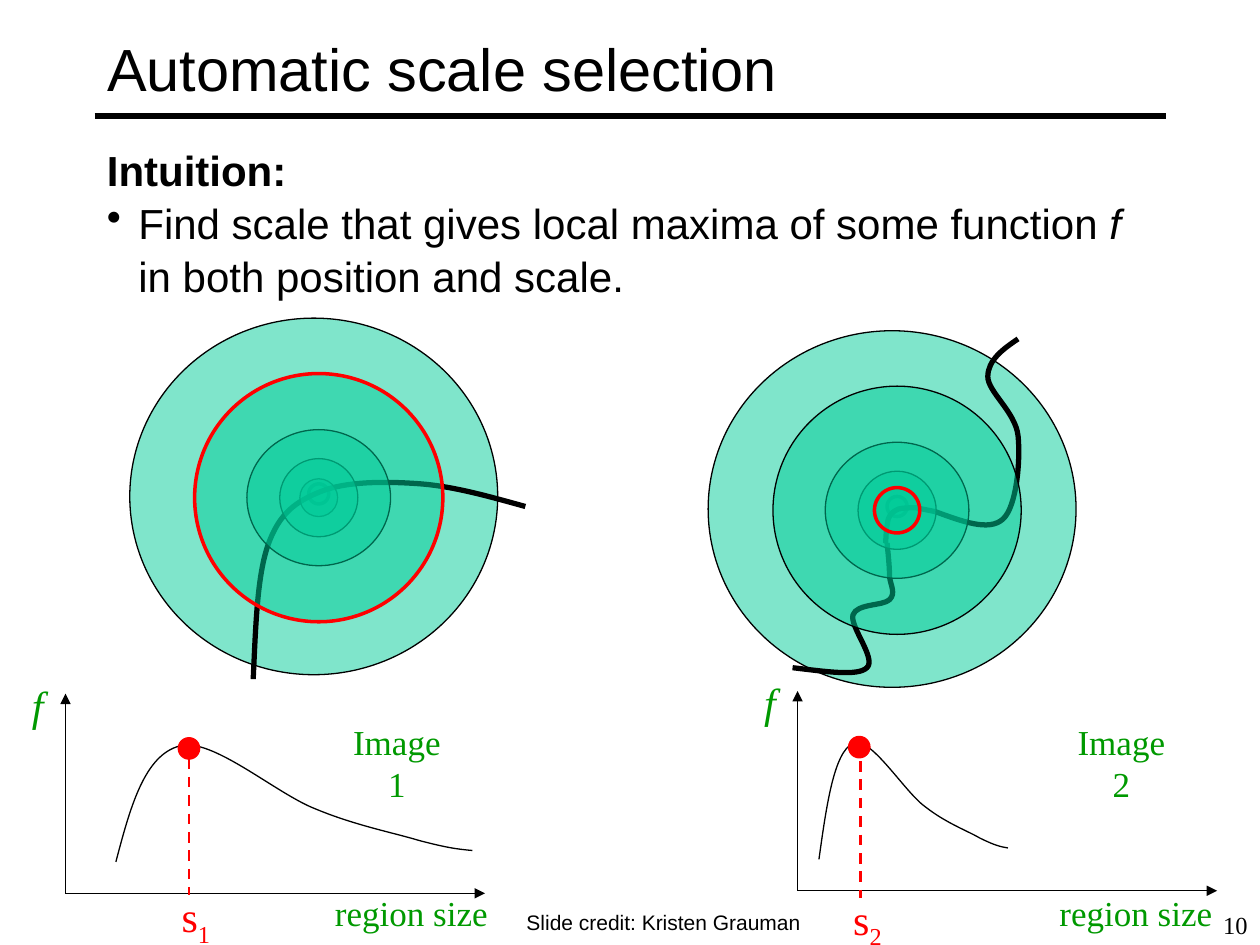
from dataclasses import dataclass
from pptx import Presentation
from pptx.dml.color import RGBColor
from pptx.enum.dml import MSO_LINE
from pptx.enum.shapes import MSO_CONNECTOR, MSO_SHAPE
from pptx.enum.text import MSO_ANCHOR, MSO_AUTO_SIZE, PP_ALIGN
from pptx.oxml.ns import qn
from pptx.util import Inches, Pt
from lxml.etree import SubElement


@dataclass(frozen=True)
class Theme:
    """Colours, fonts and type sizes of the slide."""
    ink: str = "000000"
    ring: str = "00CC99"
    accent: str = "FF0000"
    label: str = "009900"
    sans: str = "Arial"
    serif: str = "Times New Roman"
    title: int = 34
    body: int = 24
    caption: int = 20
    number: int = 14
    credit: int = 12
    hairline: float = 0.75
    dashed: float = 1.5
    marked: float = 2
    heavy: float = 3


class ScaleSlide:
    """Draws on one slide, with lengths in cells of a 100 by 75 grid."""

    columns, rows = 100, 75

    def __init__(self, presentation, theme):
        """Add a title-only slide to the presentation."""
        self.theme = theme
        self.cell_width = presentation.slide_width / self.columns
        self.cell_height = presentation.slide_height / self.rows
        self.slide = presentation.slides.add_slide(presentation.slide_layouts[5])
        self.shapes = self.slide.shapes

    def place(self, column, row):
        """Turn a grid position or size into slide units."""
        return round(column * self.cell_width), round(row * self.cell_height)

    def style_line(self, line, color, width):
        """Set the colour and width of a line."""
        line.color.rgb = RGBColor.from_string(color)
        line.width = Pt(width)

    def style_font(self, font, size, color, name):
        """Set the size, colour and typeface of a font."""
        font.size, font.name = Pt(size), name
        font.color.rgb = RGBColor.from_string(color)

    def title(self, text, left, top, width, height):
        """Move and format the title placeholder."""
        shape = self.shapes.title
        shape.left, shape.top = self.place(left, top)
        shape.width, shape.height = self.place(width, height)
        frame = shape.text_frame
        frame.text = text
        frame.vertical_anchor = MSO_ANCHOR.MIDDLE
        frame.paragraphs[0].alignment = PP_ALIGN.LEFT
        self.style_font(frame.paragraphs[0].runs[0].font, self.theme.title, self.theme.ink, self.theme.sans)

    def text(self, parts, left, top, width, height, size, color, name,
             alignment=PP_ALIGN.CENTER, wrap=False, grow=True):
        """Add a one-paragraph text box and return its runs."""
        box = self.shapes.add_textbox(*self.place(left, top), *self.place(width, height))
        frame = box.text_frame
        frame.word_wrap = wrap
        frame.auto_size = MSO_AUTO_SIZE.SHAPE_TO_FIT_TEXT if grow else MSO_AUTO_SIZE.NONE
        return self.fill_paragraph(frame.paragraphs[0], parts, size, color, name, alignment)

    def fill_paragraph(self, paragraph, parts, size, color, name, alignment):
        """Write the parts as formatted runs of a paragraph."""
        paragraph.alignment = alignment
        for part in parts:
            run = paragraph.add_run()
            run.text = part
            self.style_font(run.font, size, color, name)
        return paragraph.runs

    def body(self, heading, parts, left, top, width, height):
        """Add a bold heading followed by one bullet ending in symbol and rest."""
        theme = self.theme
        box = self.shapes.add_textbox(*self.place(left, top), *self.place(width, height))
        frame = box.text_frame
        frame.word_wrap = True
        style = theme.body, theme.ink, theme.sans, PP_ALIGN.LEFT
        self.fill_paragraph(frame.paragraphs[0], [heading], *style)[0].font.bold = True
        bullet = frame.add_paragraph()
        properties = bullet._p.get_or_add_pPr()
        properties.set("marL", str(Inches(0.25)))
        properties.set("indent", str(-Inches(0.25)))
        SubElement(properties, qn("a:buChar"), char="•")
        self.fill_paragraph(bullet, parts, *style)[1].font.italic = True
        for paragraph in frame.paragraphs:
            paragraph.line_spacing = 1.05

    def ellipse(self, center, width, height, fill, line, weight, opacity=100):
        """Add an ellipse around a centre."""
        left, top = center[0] - width / 2, center[1] - height / 2
        shape = self.shapes.add_shape(MSO_SHAPE.OVAL, *self.place(left, top), *self.place(width, height))
        shape.shadow.inherit = False
        shape.fill.solid()
        shape.fill.fore_color.rgb = RGBColor.from_string(fill)
        color = shape.fill._xPr.find(qn("a:solidFill"))[0]
        SubElement(color, qn("a:alpha"), val=str(opacity * 1000))
        self.style_line(shape.line, line, weight)

    def line(self, start, end, color, weight, arrow=False, dash=False):
        """Add a straight line, with an arrowhead or dashes if asked."""
        connector = self.shapes.add_connector(MSO_CONNECTOR.STRAIGHT, *self.place(*start), *self.place(*end))
        self.style_line(connector.line, color, weight)
        if dash:
            connector.line.dash_style = MSO_LINE.DASH
        if arrow:
            SubElement(connector.line._get_or_add_ln(), qn("a:tailEnd"), type="triangle")
        SubElement(connector._element.spPr, qn("a:effectLst"))

    def curve(self, points, weight):
        """Add an open curve of cubic segments, three points after each knot."""
        start, *others = [self.place(*point) for point in points]
        builder = self.shapes.build_freeform(*start)
        builder.add_line_segments(others, close=False)
        shape = builder.convert_to_shape()
        outline = next(shape._element.iter(qn("a:pathLst")))[0]
        steps = outline.findall(qn("a:lnTo"))
        for index in range(0, len(steps), 3):
            segment = SubElement(outline, qn("a:cubicBezTo"))
            for step in steps[index:index + 3]:
                segment.append(step[0])
                outline.remove(step)
        shape.shadow.inherit = False
        shape.fill.background()
        self.style_line(shape.line, self.theme.ink, weight)

    def rings(self, center, curves, sizes, marked):
        """Draw nested translucent rings over curves, marking one ring red."""
        theme = self.theme
        column, row = center
        self.ellipse((column, row - 0.3), 1.6, 1.6, theme.ring, theme.ink, theme.marked, 50)
        self.ellipse((column - 0.4, row - 0.1), 29.2, 28.3, theme.ring, theme.ink, theme.hairline, 50)
        for points in curves:
            self.curve(points, theme.heavy)
        for width, height in sizes:
            line, weight = (theme.accent, theme.marked) if width == marked else (theme.ink, theme.hairline)
            self.ellipse(center, width, height, theme.ring, line, weight, 50)

    def response(self, origin, number, shift, width, labels, peak, drop):
        """Plot the response f against region size and mark its peak."""
        theme = self.theme
        column, row = origin
        for end in ((column + 33.3, row), (column, row - 15.85)):
            self.line(origin, end, theme.ink, theme.hairline, arrow=True)
        symbol = self.text(["f"], column - 4.4, row - 17.5, 4.4, 5, theme.body, theme.label, theme.serif, wrap=True)
        symbol[0].font.italic = True
        for caption, left, top, size in (("region size", labels, 70.25, 14.1),
                                         (f"Image {number}", labels + 0.4, 56.7, 11)):
            self.text([caption], left, top, size, 4.3, theme.caption, theme.label, theme.serif)
        self.curve([(column + shift + x * width, row - 12.4 + y) for x, y in RESPONSE], theme.hairline)
        self.ellipse(peak, 1.7, 1.7, theme.accent, theme.accent, theme.hairline)
        column, row = drop
        self.line(drop, (column, row + 10.85), theme.accent, theme.dashed, dash=True)
        runs = self.text(["s", str(number)], column - 1.65, row + 10, 4.4, 5,
                         theme.body, theme.accent, theme.serif)
        runs[1].font._element.set("baseline", "-25000")


RESPONSE = [(0, 9.9), (0.04, 5.6), (0.08, 1.4), (0.18, 0.7), (0.27, 0), (0.45, 4.5), (0.56, 5.7),
            (0.67, 7), (0.78, 7.6), (0.85, 8.2), (0.93, 8.8), (0.96, 8.9), (1, 9)]
ARC = [(20.1, 53.9), (20.3, 49.8), (20.4, 45.7), (21.3, 43.2), (22.2, 40.7), (23.5, 39.8), (25.5, 39),
       (27.5, 38.2), (30.6, 38.2), (33.3, 38.4), (36, 38.6), (38.8, 39.4), (41.7, 40.2)]
UPPER_WAVE = [(74.2, 40.6), (76.4, 41.4), (78.5, 42.2), (79.6, 41.2), (80.7, 40.2), (81, 36.5), (80.8, 34.6),
              (80.6, 32.7), (78.4, 31.1), (78.4, 29.9), (78.4, 28.6), (79.6, 27.7), (80.8, 26.9)]
LOWER_WAVE = [(62.9, 53), (65.5, 53.3), (68.1, 53.7), (68.8, 53), (69.6, 52.3), (67.4, 49.7), (67.7, 48.8),
              (68, 47.9), (70.1, 48.1), (70.6, 47.6), (71.1, 47.1), (70.7, 46.5), (70.6, 45.8),
              (70.6, 45), (70.5, 44.1), (70.4, 43.1)]
MIDDLE_BEND = [(70.3, 43.1), (70.3, 42.4), (70.4, 41.6), (70.5, 41.2), (70.7, 40.7), (70.9, 40.6), (71.3, 40.4),
               (71.7, 40.3), (72.2, 40.3), (72.7, 40.3), (73.2, 40.4), (73.7, 40.5), (74.2, 40.6)]
SHARED_RINGS = [(6.2, 6.2), (11.4, 10.8), (19.7, 19.7)]


def main():
    """Build the slide and save it."""
    presentation = Presentation()
    presentation.slide_width, presentation.slide_height = Inches(10), Inches(7.5)
    theme = Theme()
    page = ScaleSlide(presentation, theme)
    page.line((7.5, 9.2), (92.5, 9.2), theme.ink, theme.heavy)
    page.title("Automatic scale selection", 7.5, 0.8, 85, 9.2)
    page.body("Intuition:", ["Find scale that gives local maxima of some function ", "f ",
                             "in both position and scale."], 7.5, 10.8, 82.5, 13.1)
    page.rings((25.3, 39.5), [ARC], [(3, 3), *SHARED_RINGS], marked=19.7)
    page.rings((71.2, 40.5), [UPPER_WAVE, LOWER_WAVE, MIDDLE_BEND], [*SHARED_RINGS, (3.6, 3.6)], marked=3.6)
    page.response((5.2, 70.9), 1, 4, 28.3, 25.6, (15, 59.4), (15, 60.2))
    page.response((63.3, 70.7), 2, 1.7, 15, 83.1, (68.2, 59.3), (68.3, 60.4))
    page.text(["Slide credit: Kristen Grauman"], 40.8, 71.7, 52.5, 3, theme.credit, theme.ink, theme.sans,
              PP_ALIGN.LEFT, wrap=True)
    page.text(["10"], 79.2, 71.7, 20.8, 5, theme.number, theme.ink, theme.serif,
              PP_ALIGN.RIGHT, wrap=True, grow=False)
    presentation.save("out.pptx")


if __name__ == "__main__":
    main()
